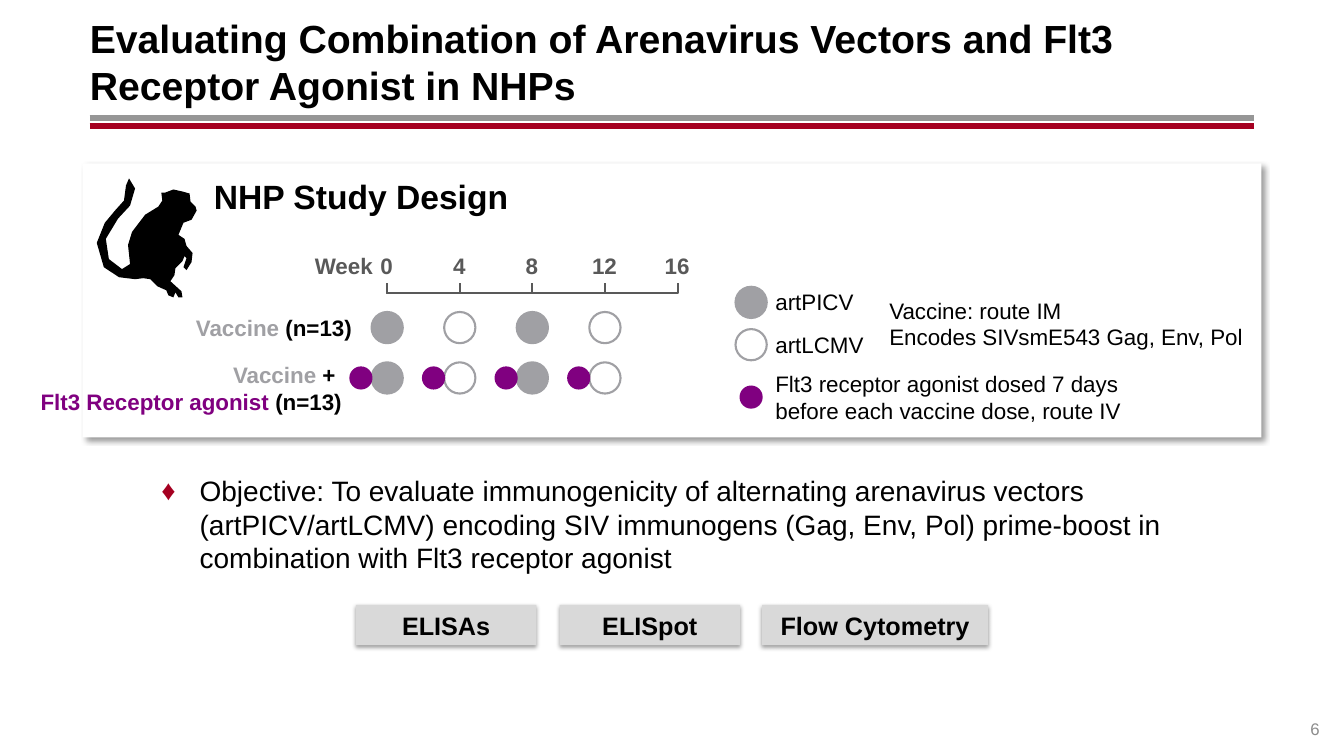
from dataclasses import dataclass

from lxml import etree
from pptx import Presentation
from pptx.dml.color import RGBColor
from pptx.enum.shapes import MSO_CONNECTOR, MSO_SHAPE
from pptx.enum.text import MSO_ANCHOR, MSO_AUTO_SIZE, PP_ALIGN
from pptx.oxml.ns import qn
from pptx.util import Inches, Pt

RECT, OVAL = MSO_SHAPE.RECTANGLE, MSO_SHAPE.OVAL
STRAIGHT = MSO_CONNECTOR.STRAIGHT
TOP, MIDDLE, BOTTOM = MSO_ANCHOR.TOP, MSO_ANCHOR.MIDDLE, MSO_ANCHOR.BOTTOM
LEFT, CENTER, RIGHT = PP_ALIGN.LEFT, PP_ALIGN.CENTER, PP_ALIGN.RIGHT
NO_AUTOFIT = MSO_AUTO_SIZE.NONE


@dataclass(frozen=True)
class Theme:
    font: str = "Arial"
    black: str = "000000"
    white: str = "FFFFFF"
    red: str = "A50021"
    rule: str = "969696"
    axis: str = "595959"
    vaccine: str = "A0A0A4"
    agonist: str = "800080"
    assay: str = "D9D9D9"
    page: str = "8C8C8C"
    title_size: int = 28
    heading_size: int = 24
    body_size: int = 20
    assay_size: int = 18
    label_size: int = 16
    page_size: int = 12


THEME = Theme()
WEEK_ZERO, WEEK_STEP = 3.84, 0.72
DOSE, AGONIST_DOSE = 0.31, 0.23

# Outline of the seated monkey, in inches on the slide
MONKEY = [
    (1.64, 1.91), (1.72, 1.88), (1.81, 1.9), (1.88, 1.92), (1.89, 2), (1.94, 2.05),
    (1.95, 2.09), (1.9, 2.18), (1.82, 2.21), (1.77, 2.33), (1.83, 2.37), (1.85, 2.44),
    (1.91, 2.51), (1.9, 2.6), (1.85, 2.68), (1.82, 2.65), (1.85, 2.56), (1.83, 2.54),
    (1.81, 2.59), (1.74, 2.66), (1.73, 2.73), (1.69, 2.79), (1.8, 2.89), (1.81, 2.95),
    (1.77, 2.95), (1.74, 2.9), (1.72, 2.95), (1.67, 2.93), (1.65, 2.88), (1.56, 2.84),
    (1.49, 2.77), (1.42, 2.76), (1.34, 2.77), (1.18, 2.75), (1.03, 2.65), (0.96, 2.41),
    (1.04, 2.21), (1.14, 2.09), (1.23, 1.99), (1.25, 1.84), (1.28, 1.77), (1.34, 1.87),
    (1.29, 2.04), (1.17, 2.17), (1.05, 2.37), (1.08, 2.57), (1.21, 2.67), (1.29, 2.62),
    (1.27, 2.43), (1.31, 2.3), (1.44, 2.13), (1.57, 2.05), (1.61, 1.99), (1.6, 1.91),
]


def color(value):
    return RGBColor.from_string(value)


def write(frame, lines, size, align=LEFT, anchor=MIDDLE, insets=(0, 0, 0, 0), wrap=True):
    """Each line is a paragraph of (text, colour, bold) runs; None breaks the line."""
    frame.word_wrap = wrap
    frame.auto_size = NO_AUTOFIT
    frame.vertical_anchor = anchor
    (frame.margin_left, frame.margin_top,
     frame.margin_right, frame.margin_bottom) = map(Inches, insets)
    for i, runs in enumerate(lines):
        paragraph = frame.add_paragraph() if i else frame.paragraphs[0]
        paragraph.alignment = align
        paragraph.font.size = Pt(size)
        for part in runs:
            if part is None:
                paragraph.add_line_break()
                continue
            text, shade, bold = part
            run = paragraph.add_run()
            run.text = text
            run.font.name, run.font.size, run.font.bold = THEME.font, Pt(size), bold
            run.font.color.rgb = color(shade)
    return frame


def add_text(slide, box, lines, size, **layout):
    return write(slide.shapes.add_textbox(*map(Inches, box)).text_frame, lines, size, **layout)


def add_block(slide, kind, box, fill, line=None):
    block = slide.shapes.add_shape(kind, *map(Inches, box))
    block.shadow.inherit = False
    block.fill.solid()
    block.fill.fore_color.rgb = color(fill)
    if line:
        block.line.color.rgb = color(line)
        block.line.width = Pt(1.5)
    else:
        block.line.fill.background()
    return block


def add_shadow(block, alpha, blur, distance, angle):
    effects = block.element.spPr.find(qn("a:effectLst"))
    shadow = etree.SubElement(effects, qn("a:outerShdw"), blurRad=str(Pt(blur)),
                              dist=str(Pt(distance)), dir=str(angle * 60000),
                              algn="t", rotWithShape="0")
    shade = etree.SubElement(shadow, qn("a:srgbClr"), val=THEME.black)
    etree.SubElement(shade, qn("a:alpha"), val=str(alpha * 1000))


def add_dot(slide, x, y, diameter, fill, line=None):
    add_block(slide, OVAL, (x - diameter / 2, y - diameter / 2, diameter, diameter), fill, line)


def add_outline(slide, points, close):
    start, *rest = [(Inches(x), Inches(y)) for x, y in points]
    builder = slide.shapes.build_freeform(*start)
    builder.add_line_segments(rest, close=close)
    outline = builder.convert_to_shape()
    outline.shadow.inherit = False
    return outline


def add_header(slide):
    for y, shade in ((1.17, THEME.rule), (1.25, THEME.red)):
        rule = slide.shapes.add_connector(STRAIGHT, *map(Inches, (0.89, y, 12.44, y)))
        rule.line.color.rgb = color(shade)
        rule.line.width = Pt(4.25)
        etree.SubElement(rule.element.spPr, qn("a:effectLst"))
    add_text(slide, (0.89, 0.18, 11.55, 0.86), [[(
        "Evaluating Combination of Arenavirus Vectors and Flt3 Receptor Agonist in NHPs",
        THEME.black, True)]], THEME.title_size, insets=(0, 0.05, 0.1, 0.05))


def add_objective(slide):
    objective = add_text(slide, (1.6, 4.65, 10.14, 1.84), [[(
        "Objective: To evaluate immunogenicity of alternating arenavirus vectors "
        "(artPICV/artLCMV) encoding SIV immunogens (Gag, Env, Pol) prime-boost in "
        "combination with Flt3 receptor agonist", THEME.black, False)]],
        THEME.body_size, anchor=TOP, insets=(0, 0.05, 0, 0.05)).paragraphs[0]
    objective.space_before = Pt(9)
    props = objective._p.get_or_add_pPr()
    props.set("marL", str(Inches(0.38)))
    props.set("indent", str(Inches(-0.38)))
    bullet_color = etree.Element(qn("a:buClr"))
    etree.SubElement(bullet_color, qn("a:srgbClr"), val=THEME.red)
    bullet_font = etree.Element(qn("a:buFont"), typeface=THEME.font)
    bullet = etree.Element(qn("a:buChar"), char="♦")
    for part in (bullet_color, bullet_font, bullet):
        props.find(qn("a:defRPr")).addprevious(part)


def add_assays(slide):
    for assay, x, width in (("ELISAs", 3.53, 1.79), ("ELISpot", 5.55, 1.79),
                            ("Flow Cytometry", 7.56, 2.24)):
        button = add_block(slide, RECT, (x, 6, width, 0.4), THEME.assay)
        add_shadow(button, 38, 3.1, 1.6, 90)
        write(button.text_frame, [[(assay, THEME.black, True)]], THEME.assay_size,
              align=CENTER, insets=(0.1, 0.05, 0.1, 0.05))


def add_schedule(slide):
    # Week axis
    add_text(slide, (3.12, 2.5, 0.58, 0.27), [[("Week", THEME.axis, True)]],
             THEME.label_size, align=CENTER, wrap=False)
    for i in range(5):
        x = WEEK_ZERO + i * WEEK_STEP
        add_text(slide, (x - 0.13, 2.5, 0.25, 0.27), [[(str(4 * i), THEME.axis, True)]],
                 THEME.label_size, align=CENTER, wrap=False)
        if i:
            span = add_outline(slide, [(x, 2.81), (x, 2.91), (WEEK_ZERO, 2.91),
                                       (WEEK_ZERO, 2.81)], close=False)
            span.fill.background()
            span.line.color.rgb = color(THEME.axis)
            span.line.width = Pt(1.5)
    # Study arms
    group_size = ("(n=13)", THEME.black, True)
    add_text(slide, (1.92, 3.11, 1.57, 0.27), [[("Vaccine ", THEME.vaccine, True), group_size]],
             THEME.label_size, align=RIGHT, wrap=False)
    add_text(slide, (0.36, 3.58, 3.03, 0.54),
             [[("Vaccine", THEME.vaccine, True), (" + ", THEME.black, True), None,
               ("Flt3 Receptor agonist ", THEME.agonist, True), group_size]],
             THEME.label_size, align=RIGHT, wrap=False)
    # Doses
    for y, with_agonist in ((3.25, False), (3.75, True)):
        for i in range(4):
            x = WEEK_ZERO + i * WEEK_STEP
            add_dot(slide, x, y, DOSE, THEME.white if i % 2 else THEME.vaccine, THEME.vaccine)
            if with_agonist:
                add_dot(slide, x - 0.26, y, AGONIST_DOSE, THEME.agonist)


def add_legend(slide):
    for vector, y, fill in (("artPICV", 3, THEME.vaccine), ("artLCMV", 3.42, THEME.white)):
        add_dot(slide, 7.45, y, DOSE, fill, THEME.vaccine)
        add_text(slide, (7.69, y - 0.14, 0.89, 0.27), [[(vector, THEME.black, False)]],
                 THEME.label_size, wrap=False)
    add_dot(slide, 7.45, 3.94, AGONIST_DOSE, THEME.agonist)
    add_text(slide, (7.69, 3.67, 3.55, 0.54), [[(
        "Flt3 receptor agonist dosed 7 days before each vaccine dose, route IV",
        THEME.black, False)]], THEME.label_size)
    add_text(slide, (8.82, 2.94, 3.55, 0.54),
             [[("Vaccine: route IM", THEME.black, False)],
              [("Encodes SIVsmE543 Gag, Env, Pol", THEME.black, False)]],
             THEME.label_size, wrap=False)


def add_study_panel(slide):
    panel = add_block(slide, RECT, (0.82, 1.62, 11.69, 2.72), THEME.white)
    add_shadow(panel, 40, 4, 3, 45)
    monkey = add_outline(slide, MONKEY, close=True)
    monkey.fill.solid()
    monkey.fill.fore_color.rgb = color(THEME.black)
    monkey.line.fill.background()
    add_text(slide, (2.12, 1.75, 2.95, 0.4), [[("NHP Study Design", THEME.black, True)]],
             THEME.heading_size, anchor=TOP, wrap=False)
    add_schedule(slide)
    add_legend(slide)


def main():
    deck = Presentation()
    deck.slide_width, deck.slide_height = Inches(13.33), Inches(7.5)
    slide = deck.slides.add_slide(deck.slide_layouts[6])
    add_header(slide)
    add_objective(slide)
    add_assays(slide)
    add_study_panel(slide)
    # Page number
    add_text(slide, (12.44, 6.93, 0.65, 0.4), [[("6", THEME.page, False)]],
             THEME.page_size, align=RIGHT, anchor=BOTTOM)
    deck.save("out.pptx")


if __name__ == "__main__":
    main()
